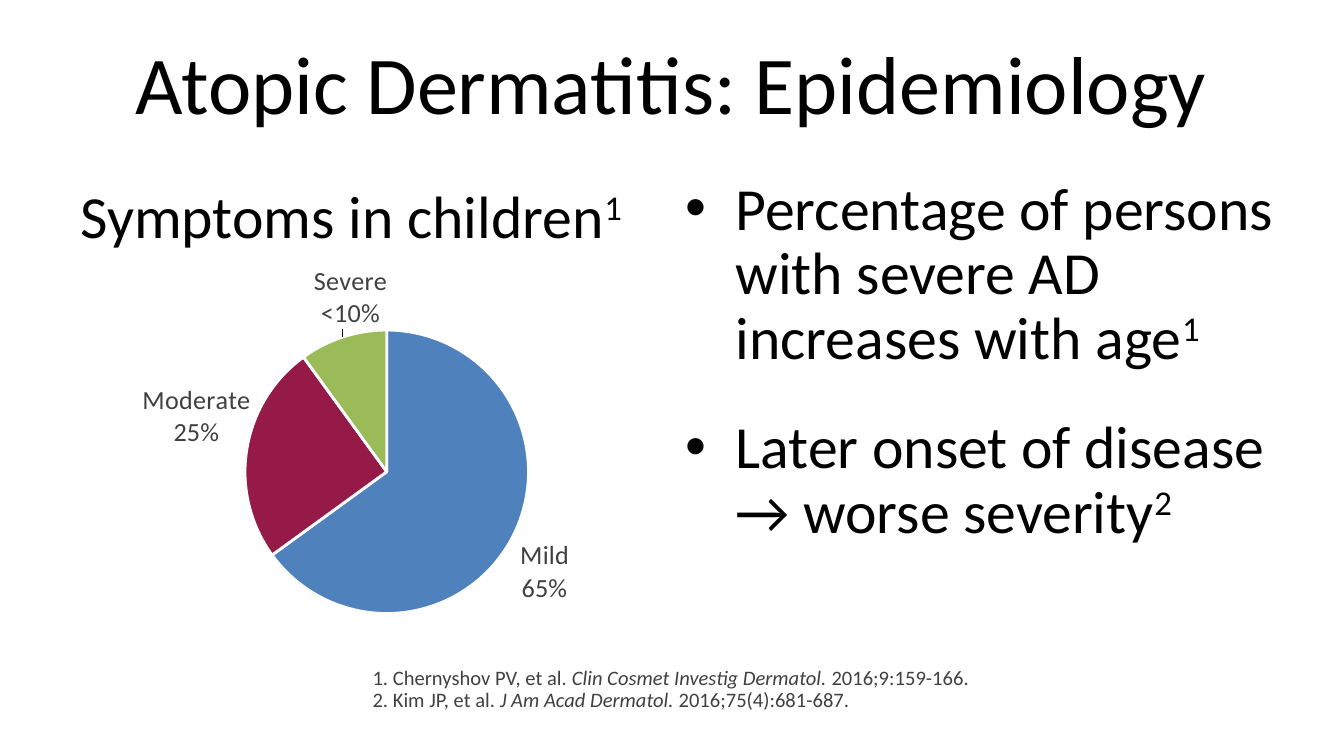
import lxml.etree
import pptx
import pptx.chart.data
import pptx.dml.color
import pptx.enum.chart
import pptx.enum.text
import pptx.oxml.ns
import pptx.util

Pt = pptx.util.Pt
RGBColor = pptx.dml.color.RGBColor
qn = pptx.oxml.ns.qn

FONT = "Calibri"
BLACK = RGBColor(0x00, 0x00, 0x00)
GREY = RGBColor(0x40, 0x40, 0x40)
WHITE = RGBColor(0xFF, 0xFF, 0xFF)
BLUE = RGBColor(0x4F, 0x81, 0xBD)
CRIMSON = RGBColor(0x95, 0x1A, 0x48)
GREEN = RGBColor(0x9B, 0xBB, 0x59)

# Category, share, label, slice colour and label shift to the right
SEVERITIES = [
    (1, 0.65, "Mild\n65%", BLUE, 0),
    (2, 0.25, "Moderate\n25%", CRIMSON, 0.02),
    (3, 0.1, "Severe\n<10%", GREEN, 0.08),
]
FINDINGS = [
    ("Percentage of persons with severe AD increases with age", "1"),
    ("Later onset of disease → worse severity", "2"),
]
REFERENCES = [
    ("1. Chernyshov PV, et al. ", "Clin Cosmet Investig Dermatol.", " 2016;9:159-166."),
    ("2. Kim JP, et al. ", "J Am Acad Dermatol.", " 2016;75(4):681-687."),
]


def format_font(font, size, color):
    font.name = FONT
    font.size = Pt(size)
    font.color.rgb = color


def add_run(paragraph, text, size, color=BLACK):
    run = paragraph.add_run()
    run.text = text
    format_font(run.font, size, color)
    return run


def add_cited_text(paragraph, text, citation):
    """Write 32 pt text followed by a raised citation number."""
    add_run(paragraph, text, 32)
    number = add_run(paragraph, citation, 32)
    number.font._element.set("baseline", "30000")


def add_text_frame(slide, left, top, width, height):
    box = slide.shapes.add_textbox(Pt(left), Pt(top), Pt(width), Pt(height))
    box.text_frame.word_wrap = True
    return box.text_frame


def next_paragraph(frame, index):
    return frame.paragraphs[0] if index == 0 else frame.add_paragraph()


def add_bullet(paragraph):
    properties = paragraph._p.get_or_add_pPr()
    properties.set("marL", str(Pt(27)))
    properties.set("indent", str(-Pt(27)))
    lxml.etree.SubElement(properties, qn("a:buFont"), typeface="Arial")
    lxml.etree.SubElement(properties, qn("a:buChar"), char="•")


def set_title(slide, text):
    title = slide.shapes.title
    title.left, title.top, title.width, title.height = Pt(36), Pt(10), Pt(648), Pt(68)
    frame = title.text_frame
    frame.text = text
    frame.vertical_anchor = pptx.enum.text.MSO_ANCHOR.MIDDLE
    frame.paragraphs[0].alignment = pptx.enum.text.PP_ALIGN.CENTER
    format_font(frame.paragraphs[0].runs[0].font, 44, BLACK)


def manual_layout(settings):
    """Build a chart layout; its numbers are fractions of the chart."""
    layout = lxml.etree.Element(qn("c:layout"))
    manual = lxml.etree.SubElement(layout, qn("c:manualLayout"))
    for tag, value in settings:
        lxml.etree.SubElement(manual, qn("c:" + tag), val=str(value))
    return layout


def set_plot_layout(chart, x, y, w, h):
    plot_area = chart._chartSpace.chart.plotArea
    for old in plot_area.findall(qn("c:layout")):
        plot_area.remove(old)
    plot_area.insert(0, manual_layout([
        ("layoutTarget", "inner"), ("xMode", "edge"), ("yMode", "edge"),
        ("x", x), ("y", y), ("w", w), ("h", h)]))


def shift_label(series, index, x):
    for label in series._element.iter(qn("c:dLbl")):
        number = label.find(qn("c:idx"))
        if number.get("val") == str(index):
            number.addnext(manual_layout([("x", x), ("y", 0)]))


def add_severity_pie(slide):
    severity_data = pptx.chart.data.CategoryChartData(number_format="0%")
    severity_data.categories = [severity[0] for severity in SEVERITIES]
    severity_data.add_series("Series 1", [severity[1] for severity in SEVERITIES])
    chart = slide.shapes.add_chart(
        pptx.enum.chart.XL_CHART_TYPE.PIE, Pt(26), Pt(120.5), Pt(312.5), Pt(245),
        severity_data).chart
    chart.has_title = False
    chart.has_legend = False
    format_font(chart.font, 8, BLACK)
    set_plot_layout(chart, 0.31, 0.23, 0.54, 0.62)

    plot = chart.plots[0]
    plot.vary_by_categories = True
    shares = plot.series[0]
    labels = shares.data_labels
    labels.show_value = True
    labels.number_format = "0%"
    labels.number_format_is_linked = False
    labels.position = pptx.enum.chart.XL_LABEL_POSITION.OUTSIDE_END
    format_font(labels.font, 14, GREY)

    # Slices and their own labels
    for index, (_, _, caption, color, shift) in enumerate(SEVERITIES):
        point = shares.points[index]
        point.format.fill.solid()
        point.format.fill.fore_color.rgb = color
        point.format.line.color.rgb = WHITE
        point.format.line.width = Pt(1.5)
        label = point.data_label
        label.text_frame.text = caption
        for paragraph in label.text_frame.paragraphs:
            format_font(paragraph.runs[0].font, 14, GREY)
        label.position = pptx.enum.chart.XL_LABEL_POSITION.OUTSIDE_END
        if shift:
            shift_label(shares, index, shift)


def add_findings(slide):
    frame = add_text_frame(slide, 360, 92, 345.6, 234)
    for index, (finding, citation) in enumerate(FINDINGS):
        paragraph = next_paragraph(frame, index)
        add_bullet(paragraph)
        paragraph.line_spacing = 0.9
        if index:
            paragraph.space_before = Pt(24)
        add_cited_text(paragraph, finding, citation)


def add_references(slide):
    frame = add_text_frame(slide, 192.5, 354, 492, 47)
    for index, (authors, journal, issue) in enumerate(REFERENCES):
        paragraph = next_paragraph(frame, index)
        paragraph.line_spacing = 0.9
        add_run(paragraph, authors, 11, GREY)
        add_run(paragraph, journal, 11, GREY).font.italic = True
        add_run(paragraph, issue, 11, GREY)


def main():
    presentation = pptx.Presentation()
    presentation.slide_width, presentation.slide_height = Pt(720), Pt(405)
    slide = presentation.slides.add_slide(presentation.slide_layouts[5])

    set_title(slide, "Atopic Dermatitis: Epidemiology")

    # Left: symptom severity
    heading = add_text_frame(slide, 36, 92, 310, 48)
    add_cited_text(heading.paragraphs[0], "Symptoms in children", "1")
    add_severity_pie(slide)

    # Right: findings; bottom: references
    add_findings(slide)
    add_references(slide)

    presentation.save("out.pptx")


if __name__ == "__main__":
    main()
